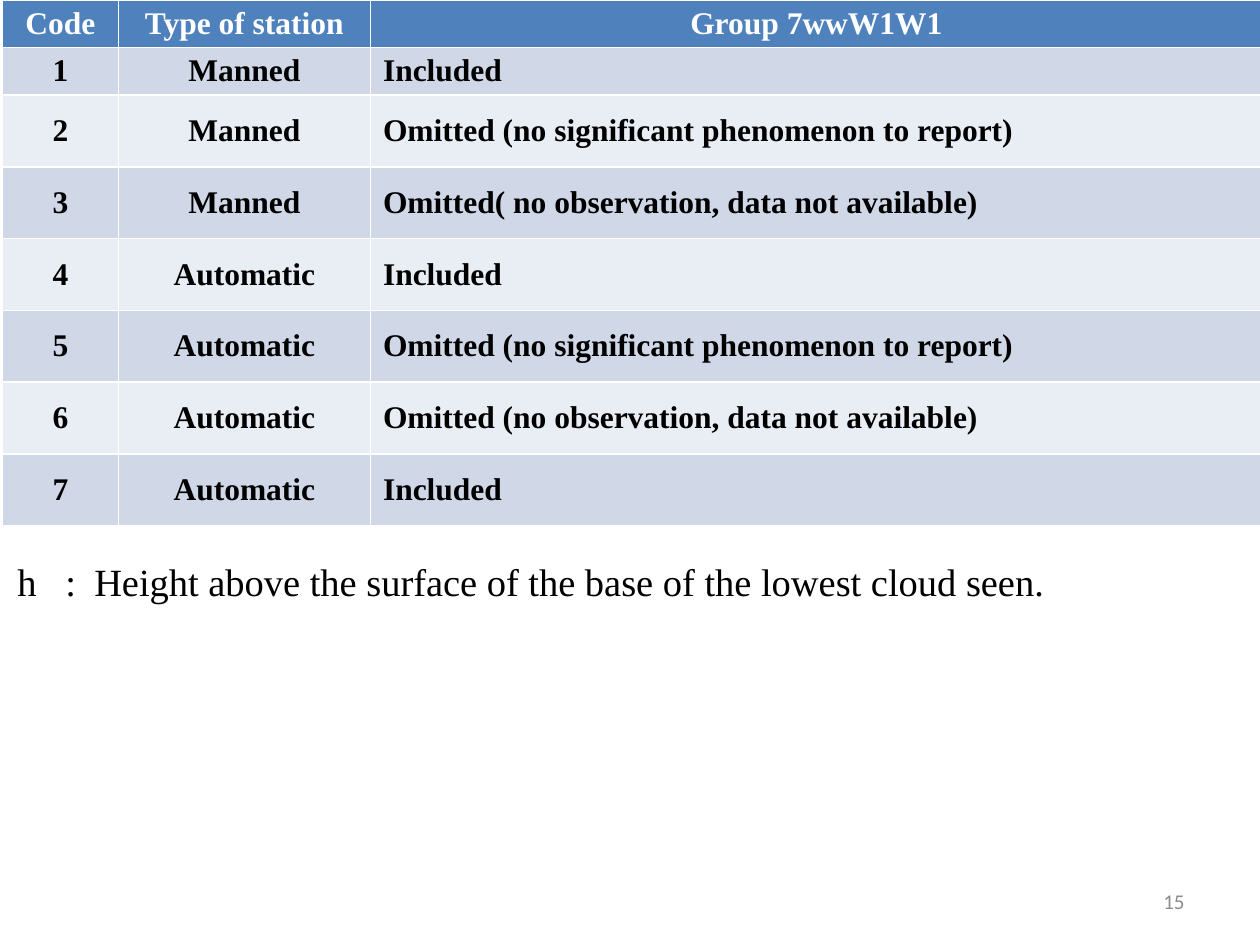
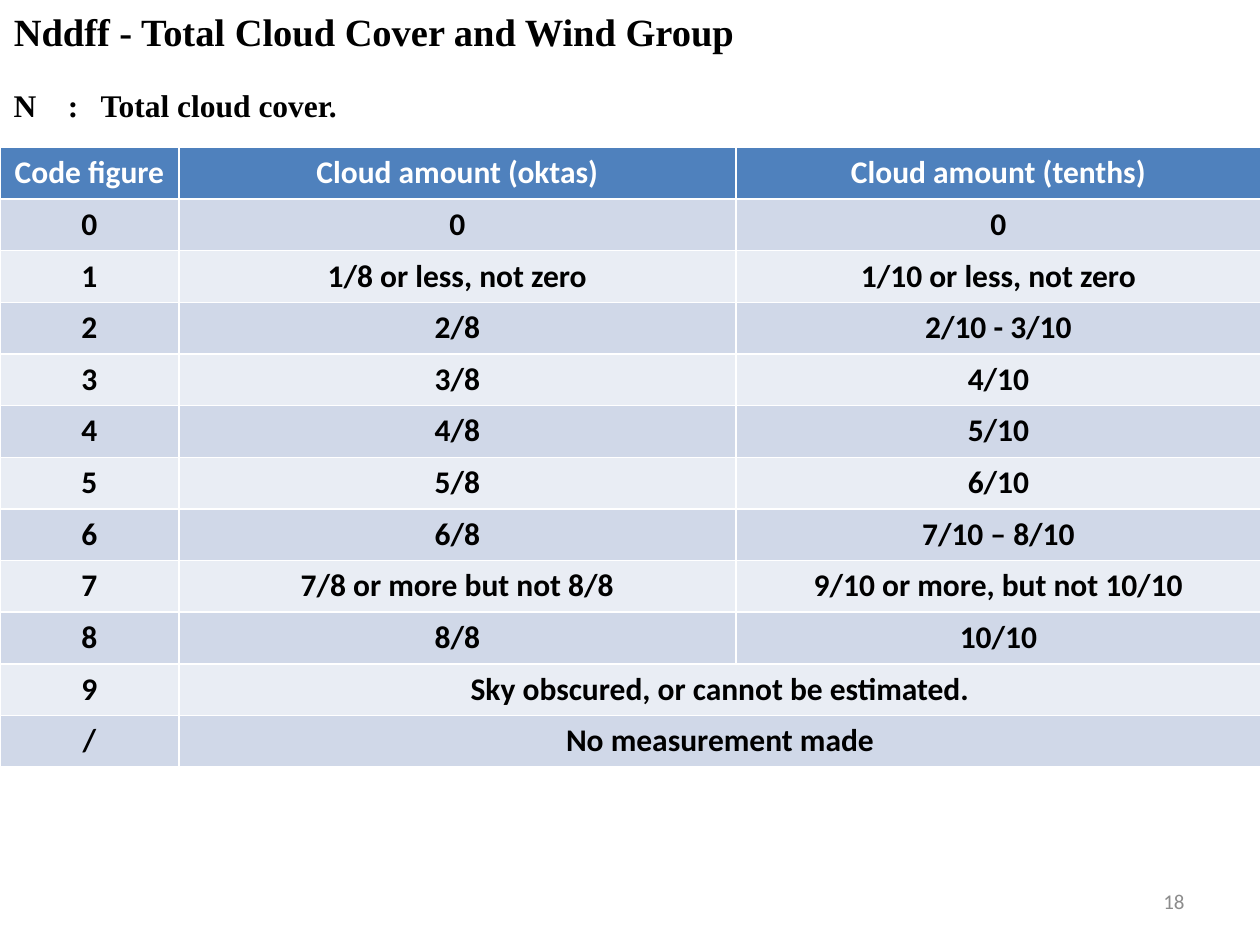
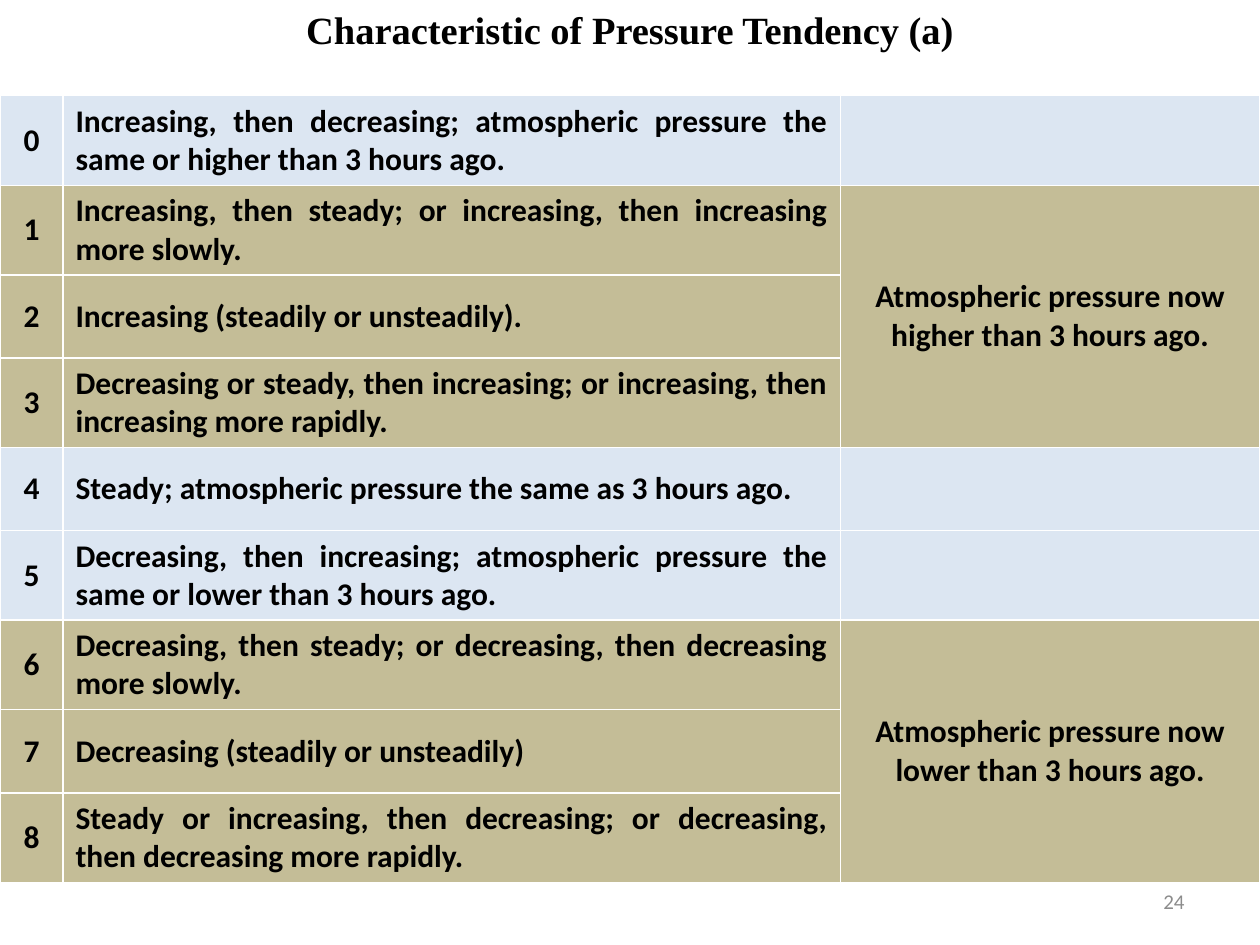
from lxml.etree import SubElement
from pptx import Presentation
from pptx.dml.color import RGBColor
from pptx.enum.text import MSO_ANCHOR as Anchor, MSO_AUTO_SIZE as AutoSize, PP_ALIGN as Align
from pptx.oxml.ns import qn
from pptx.util import Inches, Pt

SERIF, SANS = "Times New Roman", "Calibri"
BLACK, WHITE, GREY = "000000", "FFFFFF", "8C8C8C"
HEADER, BANDS = "4F81BD", ("D0D8E8", "E9EDF4")
PALE_BLUE, TAN = "DCE6F2", "C4BD97"
TITLE_ONLY, BLANK = 5, 6

STATION_ROWS = [
    ("Code", "Type of station", "Group 7wwW1W1"),
    ("1", "Manned", "Included"),
    ("2", "Manned", "Omitted (no significant phenomenon to report)"),
    ("3", "Manned", "Omitted( no observation, data not available)"),
    ("4", "Automatic", "Included"),
    ("5", "Automatic", "Omitted (no significant phenomenon to report)"),
    ("6", "Automatic", "Omitted (no observation, data not available)"),
    ("7", "Automatic", "Included"),
]
CLOUD_ROWS = [
    ("Code figure", "Cloud amount (oktas)", "Cloud amount (tenths)"),
    ("0", "0", "0"),
    ("1", "1/8 or less, not zero", "1/10 or less, not zero"),
    ("2", "2/8", "2/10 - 3/10"),
    ("3", "3/8", "4/10"),
    ("4", "4/8", "5/10"),
    ("5", "5/8", "6/10"),
    ("6", "6/8", "7/10 – 8/10"),
    ("7", "7/8 or more but not 8/8", "9/10 or more, but not 10/10"),
    ("8", "8/8", "10/10"),
    ("9", "Sky obscured, or cannot be estimated.", ""),
    ("/", "No measurement made", ""),
]
TENDENCY_ROWS = [
    ("0", "Increasing, then decreasing; atmospheric pressure the same or higher than 3 hours ago.", ""),
    ("1", "Increasing, then steady; or increasing, then increasing more slowly.",
     "Atmospheric pressure now higher than 3 hours ago."),
    ("2", "Increasing (steadily or unsteadily).", ""),
    ("3", "Decreasing or steady, then increasing; or increasing, then increasing more rapidly.", ""),
    ("4", "Steady; atmospheric pressure the same as 3 hours ago.", ""),
    ("5", "Decreasing, then increasing; atmospheric pressure the same or lower than 3 hours ago.", ""),
    ("6", "Decreasing, then steady; or decreasing, then decreasing more slowly.",
     "Atmospheric pressure now lower than 3 hours ago."),
    ("7", "Decreasing (steadily or unsteadily)", ""),
    ("8", "Steady or increasing, then decreasing; or decreasing, then decreasing more rapidly.", ""),
]

SLIDES = [
    {
        "number": "15",
        "note": ("h\t:\tHeight above the surface of the base of the lowest cloud seen.",
                 (0.04, 4.38, 9.96, 0.47), (0.38, 0.61), {"size": 22, "bold": False}),
        "table": {
            "rows": STATION_ROWS, "place": (0.02, 0), "columns": (0.92, 2, 7.08),
            "heights": [0.34, 0.33] + [0.57] * 6, "font": SERIF, "anchor": Anchor.MIDDLE,
            "aligns": (Align.CENTER, Align.CENTER, Align.LEFT),
        },
    },
    {
        "number": "18",
        "title": ("Nddff - Total Cloud Cover and Wind Group", (0.01, 0.01, 5.99, 0.47), Align.LEFT),
        "note": ("N\t:\tTotal cloud cover.",
                 (0.01, 0.63, 2.8, 0.4), (0.43, 0.69), {"size": 18, "bold": True}),
        "table": {
            "rows": CLOUD_ROWS, "place": (0, 1.17), "columns": (1.42, 4.42, 4.17),
            "heights": [0.41] * 12, "font": SANS, "anchor": Anchor.TOP,
            "aligns": (Align.CENTER,) * 3,
            "merges": [((10, 1), (10, 2)), ((11, 1), (11, 2))],
        },
    },
    {
        "number": "24",
        "title": ("Characteristic of Pressure Tendency (a)", (0, 0, 10, 0.47), Align.CENTER),
        "table": {
            "rows": TENDENCY_ROWS, "place": (0, 0.76), "columns": (0.5, 6.17, 3.33),
            "heights": [0.66] * 9, "font": SANS, "anchor": Anchor.MIDDLE,
            "aligns": (Align.CENTER, Align.JUSTIFY, Align.CENTER),
            "merges": [((1, 2), (3, 2)), ((6, 2), (8, 2))],
            "fills": [PALE_BLUE] + [TAN] * 3 + [PALE_BLUE] * 2 + [TAN] * 3,
        },
    },
]


def color(value):
    return RGBColor.from_string(value)


def write(frame, text, align=Align.LEFT, tone=BLACK, tabs=(), **font_values):
    paragraph = frame.paragraphs[0]
    paragraph.text = text
    paragraph.alignment = align
    if tabs:
        tab_list = SubElement(paragraph._p.get_or_add_pPr(), qn("a:tabLst"))
        for position in tabs:
            SubElement(tab_list, qn("a:tab"), pos=str(Inches(position)), algn="l")
    for run in paragraph.runs:
        values = {"name": SERIF, "size": 18, "bold": True} | font_values
        values["size"] = Pt(values["size"])
        for name, value in values.items():
            setattr(run.font, name, value)
        run.font.color.rgb = color(tone)


def add_text(slide, text, box, anchor=Anchor.TOP, **values):
    shape = slide.shapes.add_textbox(*map(Inches, box))
    shape.text_frame.word_wrap = True
    shape.text_frame.vertical_anchor = anchor
    write(shape.text_frame, text, **values)


def set_title(slide, text, box, align):
    title = slide.shapes.title
    for name, value in zip(("left", "top", "width", "height"), box):
        setattr(title, name, Inches(value))
    frame = title.text_frame
    frame.auto_size = AutoSize.NONE
    frame.vertical_anchor = Anchor.TOP
    write(frame, text, align, size=22)


def add_code_table(slide, rows, place, columns, heights, font, anchor, aligns, merges=(), fills=None):
    box = (*place, sum(columns), sum(heights))
    table = slide.shapes.add_table(len(rows), len(columns), *map(Inches, box)).table
    for column, width in zip(table.columns, columns):
        column.width = Inches(width)
    for row, height in zip(table.rows, heights):
        row.height = Inches(height)
    for row_index, texts in enumerate(rows):
        is_header = row_index == 0 and not fills
        band = HEADER if is_header else BANDS[(row_index - 1) % 2]
        for column_index, text in enumerate(texts):
            cell = table.cell(row_index, column_index)
            cell.fill.solid()
            cell.fill.fore_color.rgb = color(fills[row_index] if fills else band)
            cell.vertical_anchor = anchor
            write(cell.text_frame, text, Align.CENTER if is_header else aligns[column_index],
                  WHITE if is_header else BLACK, name=font)
    for first, last in merges:
        table.cell(*first).merge(table.cell(*last))


def main():
    presentation = Presentation()
    presentation.slide_width, presentation.slide_height = Inches(10), Inches(7.5)
    for content in SLIDES:
        layout = TITLE_ONLY if "title" in content else BLANK
        slide = presentation.slides.add_slide(presentation.slide_layouts[layout])
        if "title" in content:
            set_title(slide, *content["title"])
        add_code_table(slide, **content["table"])
        if "note" in content:
            text, box, tabs, font_values = content["note"]
            add_text(slide, text, box, tabs=tabs, **font_values)
        add_text(slide, content["number"], (7.17, 6.95, 2.33, 0.4), Anchor.MIDDLE,
                 align=Align.RIGHT, tone=GREY, name=SANS, size=12, bold=False)
    presentation.save("out.pptx")


if __name__ == "__main__":
    main()
